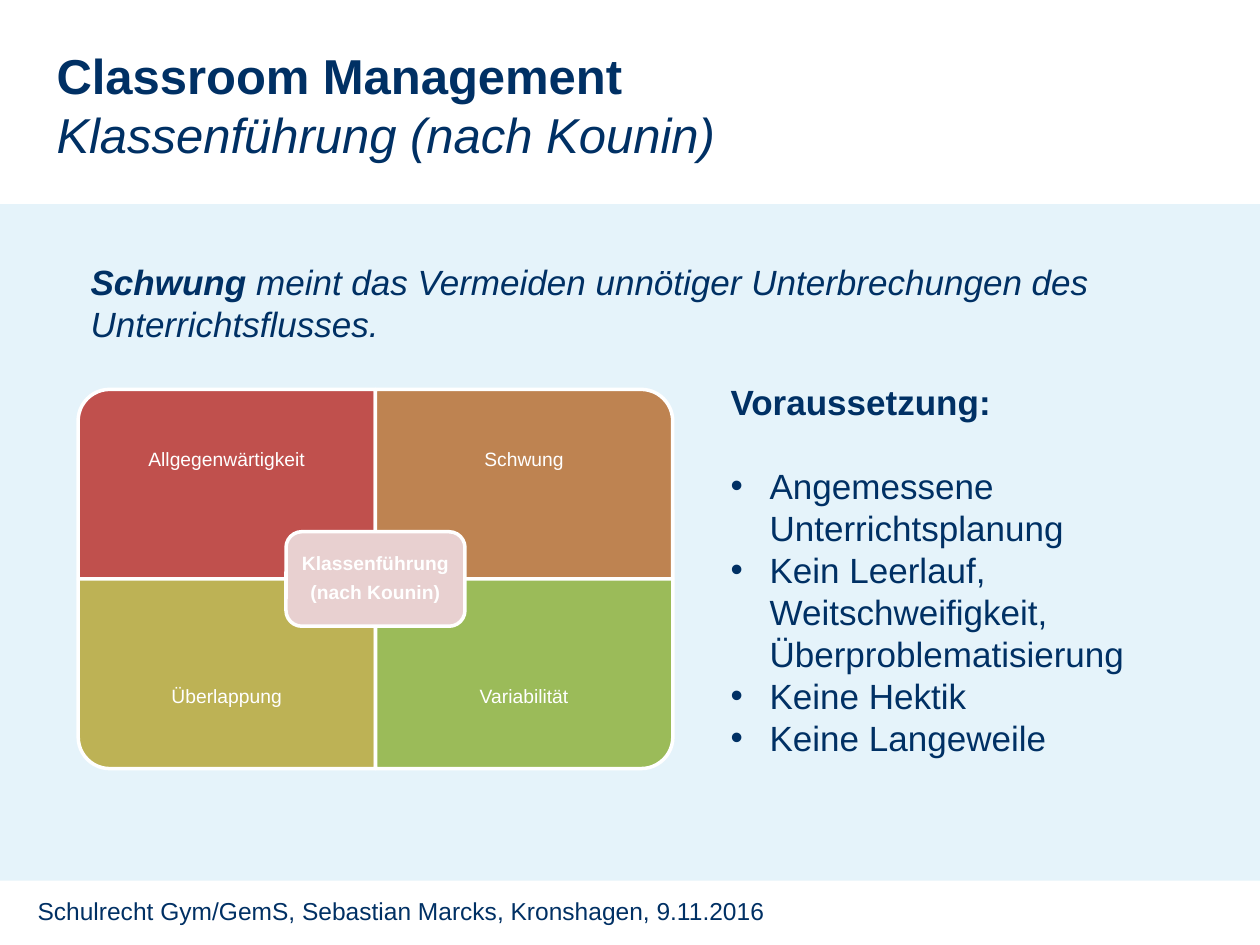
from lxml.etree import SubElement
from pptx import Presentation
from pptx.dml.color import RGBColor
from pptx.enum.shapes import MSO_SHAPE
from pptx.enum.text import MSO_ANCHOR, PP_ALIGN
from pptx.oxml.ns import qn
from pptx.util import Inches, Pt

COLORS = {
    "navy": "003064", "white": "FFFFFF", "sky": "008CCF", "red": "C0504D",
    "brown": "BE8351", "olive": "BDB255", "green": "9BBB59", "rose": "E8D0D0",
}
COLS, ROWS = 100, 75


def tint(name):
    return RGBColor.from_string(COLORS[name])


class Deck:
    font = "Arial"

    def __init__(self):
        self.prs = Presentation()
        self.prs.slide_width, self.prs.slide_height = Inches(10), Inches(7.5)
        self.slide = self.prs.slides.add_slide(self.prs.slide_layouts[6])

    def area(self, col, row, wide, high):
        x, y = self.prs.slide_width / COLS, self.prs.slide_height / ROWS
        return [round(v) for v in (col * x, row * y, wide * x, high * y)]

    def shape(self, kind, area, fill, alpha=None, edge=None, turn=0):
        col, row, wide, high = area
        if turn % 180:  # a quarter turn swaps the sides about the centre
            shift = (wide - high) / 2
            col, row, wide, high = col + shift, row - shift, high, wide
        item = self.slide.shapes.add_shape(kind, *self.area(col, row, wide, high))
        item.shadow.inherit = False
        item.rotation = turn
        item.fill.solid()
        item.fill.fore_color.rgb = tint(fill)
        if alpha:
            clr = item.fill._xPr.find(".//" + qn("a:srgbClr"))
            SubElement(clr, qn("a:alpha"), val=str(alpha * 1000))
        if edge:
            item.line.color.rgb = tint(edge)
            item.line.width = Pt(2)
        else:
            item.line.fill.background()

    def text(self, area, lines, size, color="navy", inset=None, label=False):
        """Each line is a list of (words, style) runs; style holds b and i."""
        frame = self.slide.shapes.add_textbox(*self.area(*area)).text_frame
        frame.word_wrap = True
        if inset:
            frame.margin_left = frame.margin_right = Inches(inset)
            frame.margin_top = frame.margin_bottom = Inches(inset)
        if label:
            frame.vertical_anchor = MSO_ANCHOR.MIDDLE
        for n, runs in enumerate(lines):
            para = frame.add_paragraph() if n else frame.paragraphs[0]
            if label:
                para.alignment = PP_ALIGN.CENTER
                para.line_spacing = 0.9
                para.space_after = Pt(4.4)
            for words, style in runs:
                run = para.add_run()
                run.text = words
                run.font.name, run.font.size = self.font, Pt(size)
                run.font.color.rgb = tint(color)
                run.font.bold, run.font.italic = "b" in style, "i" in style
        return frame

    def bullets(self, paras, indent):
        for para in paras:
            props = para._p.get_or_add_pPr()
            props.set("marL", str(Inches(indent)))
            props.set("indent", str(-Inches(indent)))
            SubElement(props, qn("a:buFont"), typeface=self.font)
            SubElement(props, qn("a:buChar"), char="•")


def main():
    deck = Deck()

    # Background band, footer and title
    deck.shape(MSO_SHAPE.RECTANGLE, (0, 16.2, COLS, 53.7), "sky", alpha=10)
    deck.text((2, 70.6, 85.8, 3.4), [
        [("Schulrecht Gym/GemS, Sebastian Marcks, Kronshagen, 9.11.2016", "")]], 14)
    deck.text((3.5, 3.1, 62.2, 10.4), [
        [("Classroom Management", "b")],
        [("Klassenführung (nach Kounin)", "i")]], 28)

    # Matrix of four fields, rounded at the outer corners
    left, top, wide, high = 6.2, 30.9, 23.6, 15.05
    fields = [
        ("Allgegenwärtigkeit", "red", 270), ("Schwung", "brown", 0),
        ("Überlappung", "olive", 180), ("Variabilität", "green", 90),
    ]
    for n, (name, fill, turn) in enumerate(fields):
        row, col = divmod(n, 2)
        x, y = left + col * wide, top + row * high
        deck.shape(MSO_SHAPE.ROUND_1_RECTANGLE, (x, y, wide, high), fill,
                   edge="white", turn=turn)
        deck.text((x, y + row * high / 4, wide, high * 3 / 4), [[(name, "")]],
                  11, "white", inset=0.09, label=True)

    # Core field, centred on the matrix
    core, deep, pad = 14.2, 7.5, 0.4
    x, y = left + wide - core / 2, top + high - deep / 2
    deck.shape(MSO_SHAPE.ROUNDED_RECTANGLE, (x, y, core, deep), "rose", edge="white")
    deck.text((x + pad, y + pad, core - 2 * pad, deep - 2 * pad),
              [[("Klassenführung", "b")], [("(nach Kounin)", "b")]],
              11, "white", inset=0.05, label=True)

    # Definition
    deck.text((left, 20.2, COLS - left, 7.8), [
        [("Schwung", "bi"),
         (" meint das Vermeiden unnötiger Unterbrechungen des Unterrichtsflusses.", "i")]],
        20)

    # Requirements
    needs = ["Angemessene Unterrichtsplanung",
             "Kein Leerlauf, Weitschweifigkeit, Überproblematisierung",
             "Keine Hektik", "Keine Langeweile"]
    lines = [[("Voraussetzung:", "b")]] + [[(need, "")] for need in needs]
    head, *items = deck.text((57, 29.7, 43, 31.3), lines, 20).paragraphs
    head.space_after = Pt(24)
    deck.bullets(items, 0.31)

    deck.prs.save("out.pptx")


if __name__ == "__main__":
    main()
